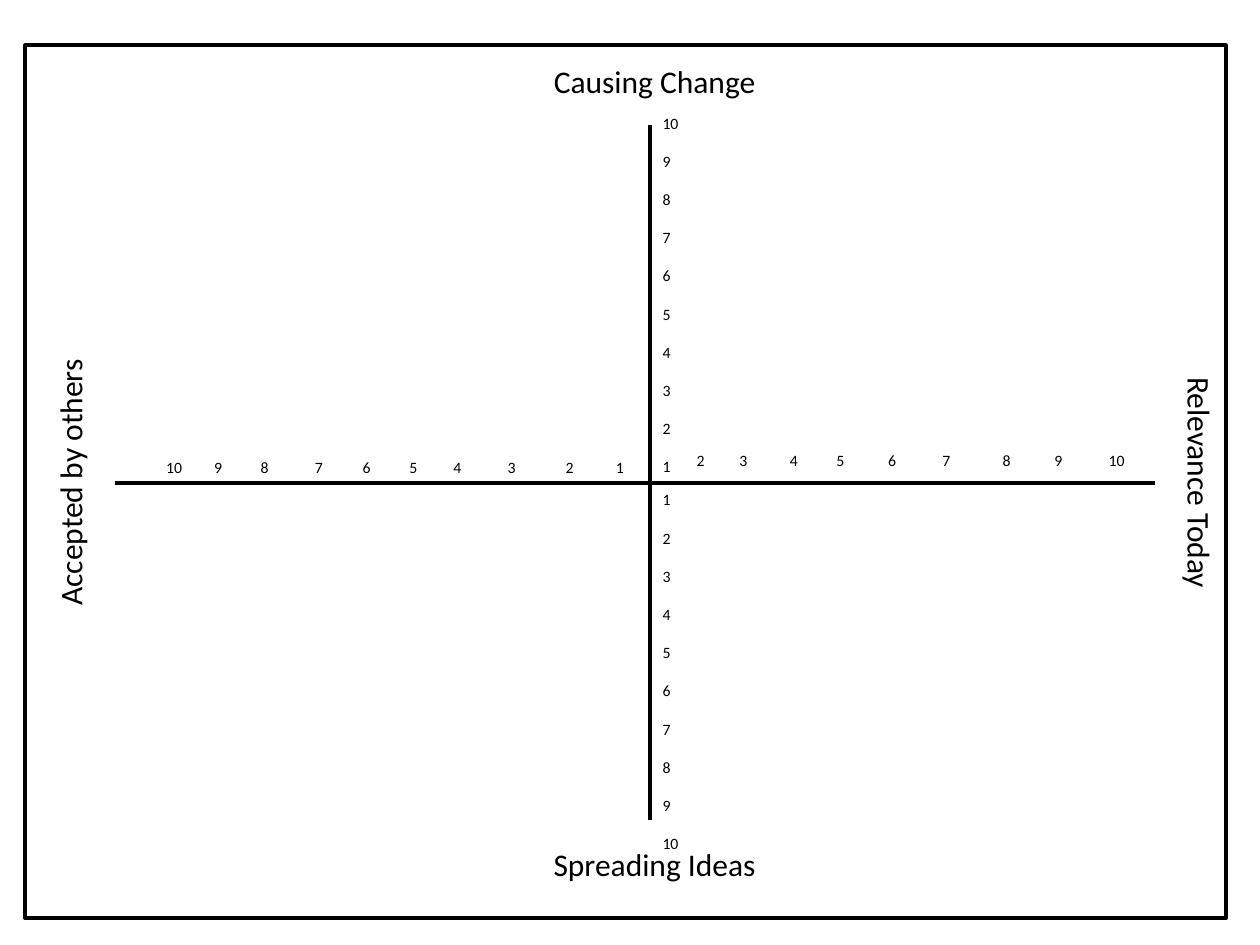
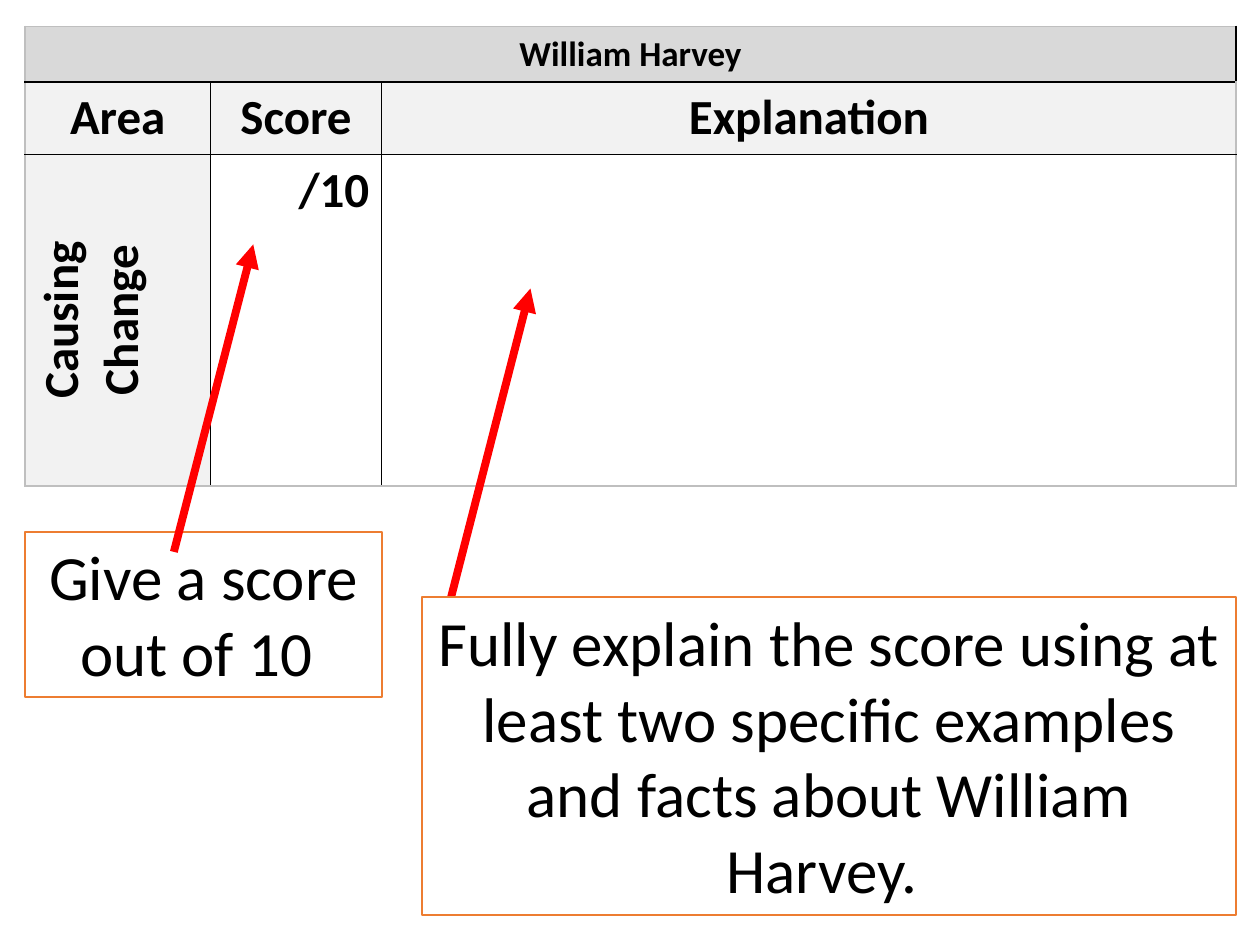
from dataclasses import dataclass

from lxml import etree
from pptx import Presentation
from pptx.dml.color import RGBColor
from pptx.enum.shapes import MSO_CONNECTOR, MSO_SHAPE
from pptx.enum.text import MSO_ANCHOR, PP_ALIGN
from pptx.oxml.ns import qn
from pptx.util import Inches, Pt

LEFT, CENTER, RIGHT = PP_ALIGN.LEFT, PP_ALIGN.CENTER, PP_ALIGN.RIGHT
TOP = MSO_ANCHOR.TOP
RECTANGLE = MSO_SHAPE.RECTANGLE
STRAIGHT = MSO_CONNECTOR.STRAIGHT


@dataclass(frozen=True)
class Theme:
    font: str = "Calibri"
    ink: str = "000000"
    paper: str = "FFFFFF"
    title_fill: str = "D9D9D9"
    head_fill: str = "F2F2F2"
    table_edge: str = "BFBFBF"
    note_edge: str = "ED7D31"
    arrow: str = "FF0000"
    scale_size: float = 9
    scale_gap: float = 11
    label_size: float = 18
    table_title_size: float = 20
    table_size: float = 28
    note_size: float = 36
    thin: float = 1
    axis_width: float = 2.25
    arrow_width: float = 4.5


class SlideBuilder:
    def __init__(self, presentation, theme):
        self.presentation = presentation
        self.theme = theme
        self.slide = None

    def new_slide(self):
        self.slide = self.presentation.slides.add_slide(self.presentation.slide_layouts[6])

    def style(self, paragraph, size, align=LEFT, bold=False):
        paragraph.alignment = align
        font = paragraph.font
        font.name = self.theme.font
        font.size = Pt(size)
        font.bold = bold
        font.color.rgb = RGBColor.from_string(self.theme.ink)

    def text(self, left, top, width, height, lines, size, align=LEFT, gap=0, tabs=(), rotation=0):
        shape = self.slide.shapes.add_textbox(Inches(left), Inches(top), Inches(width), Inches(height))
        shape.rotation = rotation
        frame = shape.text_frame
        frame.word_wrap = True
        for index, line in enumerate(lines):
            paragraph = frame.add_paragraph() if index else frame.paragraphs[0]
            paragraph.text = line
            if index:
                paragraph.space_before = Pt(gap)
            if tabs:
                tab_list = etree.SubElement(paragraph._p.get_or_add_pPr(), qn("a:tabLst"))
                for position in tabs:
                    etree.SubElement(tab_list, qn("a:tab"), pos=str(Inches(position)), algn="l")
            self.style(paragraph, size, align)

    def box(self, left, top, width, height, edge, edge_width, text=""):
        shape = self.slide.shapes.add_shape(
            RECTANGLE, Inches(left), Inches(top), Inches(width), Inches(height))
        shape.shadow.inherit = False
        shape.fill.solid()
        shape.fill.fore_color.rgb = RGBColor.from_string(self.theme.paper)
        shape.line.color.rgb = RGBColor.from_string(edge)
        shape.line.width = Pt(edge_width)
        if text:
            frame = shape.text_frame
            frame.word_wrap = True
            frame.vertical_anchor = TOP
            frame.text = text
            self.style(frame.paragraphs[0], self.theme.note_size, CENTER)

    def line(self, start, end, color, width, arrow=False):
        connector = self.slide.shapes.add_connector(
            STRAIGHT, *(Inches(value) for value in (*start, *end)))
        connector.line.color.rgb = RGBColor.from_string(color)
        connector.line.width = Pt(width)
        if arrow:
            etree.SubElement(connector.line._get_or_add_ln(), qn("a:tailEnd"), type="triangle")
        etree.SubElement(connector._element.spPr, qn("a:effectLst"))

    def cell(self, cell, text, size, fill, edges, align=CENTER, vertical=False):
        properties = cell._tc.get_or_add_tcPr()
        if vertical:
            properties.set("vert", "vert270")
        for side, color in edges.items():
            border = etree.SubElement(properties, qn(f"a:ln{side}"), w=str(Pt(self.theme.thin)))
            solid = etree.SubElement(border, qn("a:solidFill"))
            etree.SubElement(solid, qn("a:srgbClr"), val=color)
        cell.fill.solid()
        cell.fill.fore_color.rgb = RGBColor.from_string(fill)
        cell.text = text
        self.style(cell.text_frame.paragraphs[0], size, align, True)

    def score_table(self, left, top, widths, heights, rows):
        theme = self.theme
        table = self.slide.shapes.add_table(
            len(heights), len(widths), Inches(left), Inches(top),
            Inches(sum(widths)), Inches(sum(heights))).table
        table.first_row = table.horz_banding = False
        for column, width in zip(table.columns, widths):
            column.width = Inches(width)
        for row, height in zip(table.rows, heights):
            row.height = Inches(height)
        last_row, last_column = len(heights) - 1, len(widths) - 1
        for r, texts in enumerate(rows):
            for c, text in enumerate(texts):
                outer = {"L": c == 0, "R": c == last_column, "T": r == 0, "B": r == last_row}
                edges = {side: theme.table_edge if edge else theme.ink for side, edge in outer.items()}
                body = r == last_row
                fill = theme.title_fill if r == 0 else theme.paper if body and c else theme.head_fill
                size = theme.table_size if r else theme.table_title_size
                align = RIGHT if body and c else CENTER
                self.cell(table.cell(r, c), text, size, fill, edges, align, body and c == 0)
        table.cell(0, 0).merge(table.cell(0, last_column))


def build_score_axes(builder):
    theme = builder.theme
    builder.new_slide()
    builder.box(0.2, 0.36, 9.53, 6.93, theme.ink, theme.axis_width)
    for left, top, rotation, label in (
        (3.5, 0.44, 0, "Causing Change"),
        (3.5, 6.66, 0, "Spreading Ideas"),
        (-1.14, 3.63, 270, "Accepted by others"),
        (7.83, 3.63, 90, "Relevance Today"),
    ):
        builder.text(left, top, 3.39, 0.4, [label], theme.label_size, CENTER, rotation=rotation)
    for start, end in (((0.91, 3.83), (9.17, 3.83)), ((5.16, 0.99), (5.16, 6.51))):
        builder.line(start, end, theme.ink, theme.axis_width)

    scores = [str(score) for score in range(1, 11)]
    for top, column in ((0.85, scores[::-1]), (3.84, scores)):
        builder.text(5.16, top, 0.39, 2.98, column, theme.scale_size, gap=theme.scale_gap)
    right_tabs = (0.34, 0.74, 1.11, 1.52, 1.95, 2.43, 2.84, 3.27)
    left_tabs = (0.38, 0.75, 1.18, 1.56, 1.93, 2.28, 2.71, 3.17, 3.57)
    for left, top, row, tabs in (
        (5.43, 3.53, scores[1:], right_tabs),
        (1.22, 3.58, scores[::-1], left_tabs),
    ):
        builder.text(left, top, 3.89, 0.25, ["\t".join(row)], theme.scale_size, tabs=tabs)


def build_score_guide(builder):
    theme = builder.theme
    builder.new_slide()
    builder.score_table(0.2, 0.21, (1.47, 1.36, 6.78), (0.44, 0.57, 2.63), (
        ("William Harvey", "", ""),
        ("Area", "Score", "Explanation"),
        ("Causing Change", "/10", ""),
    ))
    builder.box(0.2, 4.22, 2.83, 1.31, theme.note_edge, theme.thin, "Give a score out of 10 ")
    for start, end in (((1.38, 4.38), (2.01, 1.94)), ((3.58, 4.74), (4.21, 2.29))):
        builder.line(start, end, theme.arrow, theme.arrow_width, arrow=True)
    builder.box(3.35, 4.74, 6.46, 2.52, theme.note_edge, theme.thin,
                "Fully explain the score using at least two specific examples "
                "and facts about William Harvey. ")


def main():
    presentation = Presentation()
    presentation.slide_width = Inches(10)
    presentation.slide_height = Inches(7.5)
    builder = SlideBuilder(presentation, Theme())
    build_score_axes(builder)
    build_score_guide(builder)
    presentation.save("out.pptx")


if __name__ == "__main__":
    main()
